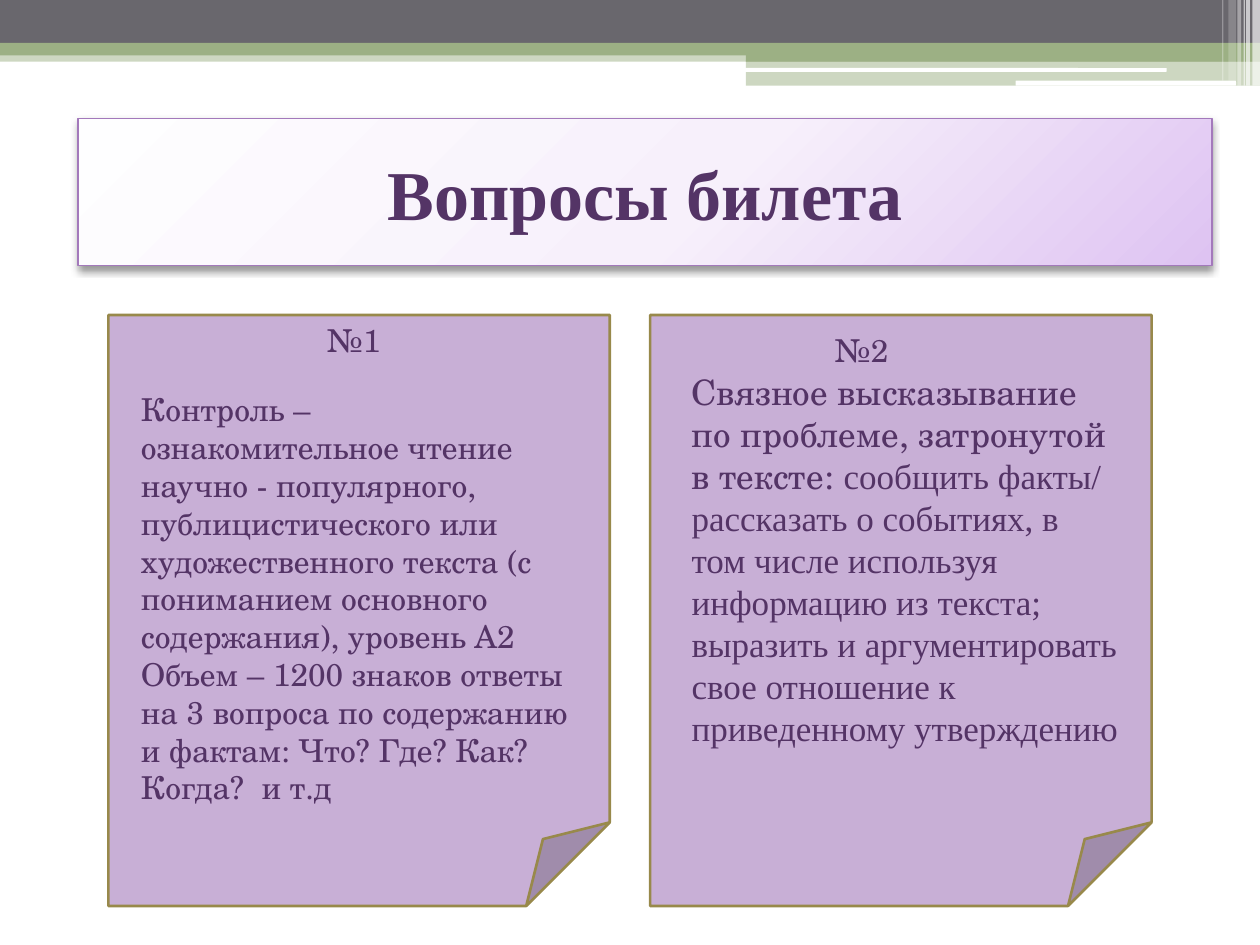
"""Build the slide listing the two questions of an exam ticket."""
import pptx
import pptx.dml.color
import pptx.enum.shapes
import pptx.enum.text
import pptx.oxml
import pptx.oxml.ns
import pptx.util

Color = pptx.dml.color.RGBColor
Shape = pptx.enum.shapes.MSO_SHAPE
Align = pptx.enum.text.PP_ALIGN
Inches = pptx.util.Inches
NAMESPACE = pptx.oxml.ns.nsdecls("a")

WHITE = Color(0xFF, 0xFF, 0xFF)
GRAY = Color(0x69, 0x67, 0x6D)
GREEN = Color(0x9C, 0xB0, 0x84)
PLUM = Color(0x54, 0x34, 0x66)
VIOLET = Color(0xA3, 0x79, 0xBB)
LILAC = Color(0xC8, 0xAF, 0xD6)
OLIVE = Color(0x98, 0x89, 0x4B)

SCHOOL = "TeX Gyre Schola"
TIMES = "Times New Roman"
WIDTH, HEIGHT = 10, 7.5
RIGHT_BAND = 5.92
NOTE_TOP, NOTE_WIDTH, NOTE_HEIGHT = 2.5, 3.98, 4.69
NOTE_LEFT, NOTE_STEP = 0.86, 4.3

BANDS = [
    ((0, 0.4, WIDTH, 0.09), GREEN, 50),
    ((0, 0, WIDTH, 0.34), GRAY, 100),
    ((0, 0.34, WIDTH, 0.1), GREEN, 100),
    ((RIGHT_BAND, 0.39, WIDTH - RIGHT_BAND, 0.1), GREEN, 100),
    ((RIGHT_BAND, 0.48, WIDTH - RIGHT_BAND, 0.2), GREEN, 50),
]
PILLS = [(5.91, 0.54, 3.35, 0.03), (8.06, 0.64, 1.75, 0.04)]
STRIPES = [
    (9.94, 0.06, 0.68, 65),
    (9.89, 0.03, 0.68, 65),
    (9.87, 0.01, 0.68, 60),
    (9.82, 0.03, 0.68, 40),
    (9.75, 0.06, 0.64, 20),
    (9.7, 0.01, 0.64, 30),
]

TITLE = "Вопросы билета"
QUESTIONS = [
    {
        "label": "№1",
        "label_area": (1.48, 2.5, 2.66, 0.4),
        "body_area": (1.02, 3.05, 3.59, 3.43),
        "size": 18,
        "body": [
            [("Контроль –ознакомительное чтение научно - популярного, "
              "публицистического или художественного текста (с пониманием "
              "основного содержания), уровень А2", SCHOOL)],
            [("Объем – 1200 знаков ответы на 3 вопроса по содержанию и фактам: "
              "Что? Где? Как? Когда?  и т.д", SCHOOL)],
        ],
    },
    {
        "label": "№2",
        "label_area": (5.63, 2.58, 2.42, 0.4),
        "body_area": (5.39, 2.89, 3.59, 3.43),
        "size": 20,
        "body": [
            [("Связное высказывание по проблеме, затронутой в тексте: ", SCHOOL),
             ("сообщить факты/ рассказать о событиях, в том числе используя "
              "информацию из текста; выразить и аргументировать свое отношение "
              "к приведенному утверждению", TIMES)],
        ],
    },
]

TITLE_GRADIENT = f"""<a:gradFill {NAMESPACE} rotWithShape="1"><a:gsLst>
<a:gs pos="0"><a:srgbClr val="FEFEFF"/></a:gs>
<a:gs pos="55000"><a:srgbClr val="F7F0FB"/></a:gs>
<a:gs pos="100000"><a:srgbClr val="DEC3F2"/></a:gs></a:gsLst>
<a:path path="circle"><a:fillToRect l="-40000" t="-90000" r="140000" b="190000"/></a:path>
</a:gradFill>"""
TITLE_SHADOW = f"""<a:outerShdw {NAMESPACE} blurRad="52070" dist="25400" dir="5400000"
rotWithShape="0"><a:srgbClr val="000000"><a:alpha val="40000"/></a:srgbClr></a:outerShdw>"""


def add_block(page, kind, area, fill=None, opacity=100, line=None, line_width=1.5):
    block = page.shapes.add_shape(kind, *map(Inches, area))
    block.shadow.inherit = False
    if fill is not None:
        block.fill.solid()
        block.fill.fore_color.rgb = fill
        if opacity < 100:
            color = block.fill._xPr.find(".//" + pptx.oxml.ns.qn("a:srgbClr"))
            color.append(pptx.oxml.parse_xml(
                f'<a:alpha {NAMESPACE} val="{opacity * 1000}"/>'))
    if line is None:
        block.line.fill.background()
    else:
        block.line.color.rgb = line
        block.line.width = pptx.util.Pt(line_width)
    return block


def write(frame, paragraphs, size, align=Align.LEFT, bold=False):
    frame.word_wrap = True
    for index, spans in enumerate(paragraphs):
        para = frame.paragraphs[0] if index == 0 else frame.add_paragraph()
        para.alignment = align
        para.font.size = pptx.util.Pt(size)
        para.font.bold = bold
        para.font.color.rgb = PLUM
        for text, font in spans:
            span = para.add_run()
            span.text = text
            span.font.name = font


def add_text(page, area, paragraphs, size, align=Align.LEFT):
    box = page.shapes.add_textbox(*map(Inches, area))
    write(box.text_frame, paragraphs, size, align)


def add_header(page):
    for area, color, opacity in BANDS:
        add_block(page, Shape.RECTANGLE, area, color, opacity)
    for area in PILLS:
        add_block(page, Shape.ROUNDED_RECTANGLE, area, WHITE)
    for left, width, height, opacity in STRIPES:
        add_block(page, Shape.RECTANGLE, (left, 0, width, height), WHITE, opacity)


def add_title(page):
    panel = add_block(page, Shape.RECTANGLE, (0.62, 0.94, 9, 1.17),
                      line=VIOLET, line_width=0.75)
    properties = panel.element.spPr
    geometry = properties.find(pptx.oxml.ns.qn("a:prstGeom"))
    geometry.addnext(pptx.oxml.parse_xml(TITLE_GRADIENT))
    effects = properties.find(pptx.oxml.ns.qn("a:effectLst"))
    effects.append(pptx.oxml.parse_xml(TITLE_SHADOW))
    panel.text_frame.vertical_anchor = pptx.enum.text.MSO_ANCHOR.MIDDLE
    write(panel.text_frame, [[(TITLE, TIMES)]], 40, Align.CENTER, bold=True)


def main():
    deck = pptx.Presentation()
    deck.slide_width, deck.slide_height = Inches(WIDTH), Inches(HEIGHT)
    page = deck.slides.add_slide(deck.slide_layouts[6])
    add_header(page)
    add_title(page)
    for column, question in enumerate(QUESTIONS):
        left = NOTE_LEFT + column * NOTE_STEP
        add_block(page, Shape.FOLDED_CORNER, (left, NOTE_TOP, NOTE_WIDTH, NOTE_HEIGHT),
                  LILAC, line=OLIVE)
        add_text(page, question["body_area"], question["body"], question["size"])
        add_text(page, question["label_area"], [[(question["label"], SCHOOL)]],
                 18, Align.CENTER)
    deck.save("out.pptx")


if __name__ == "__main__":
    main()
